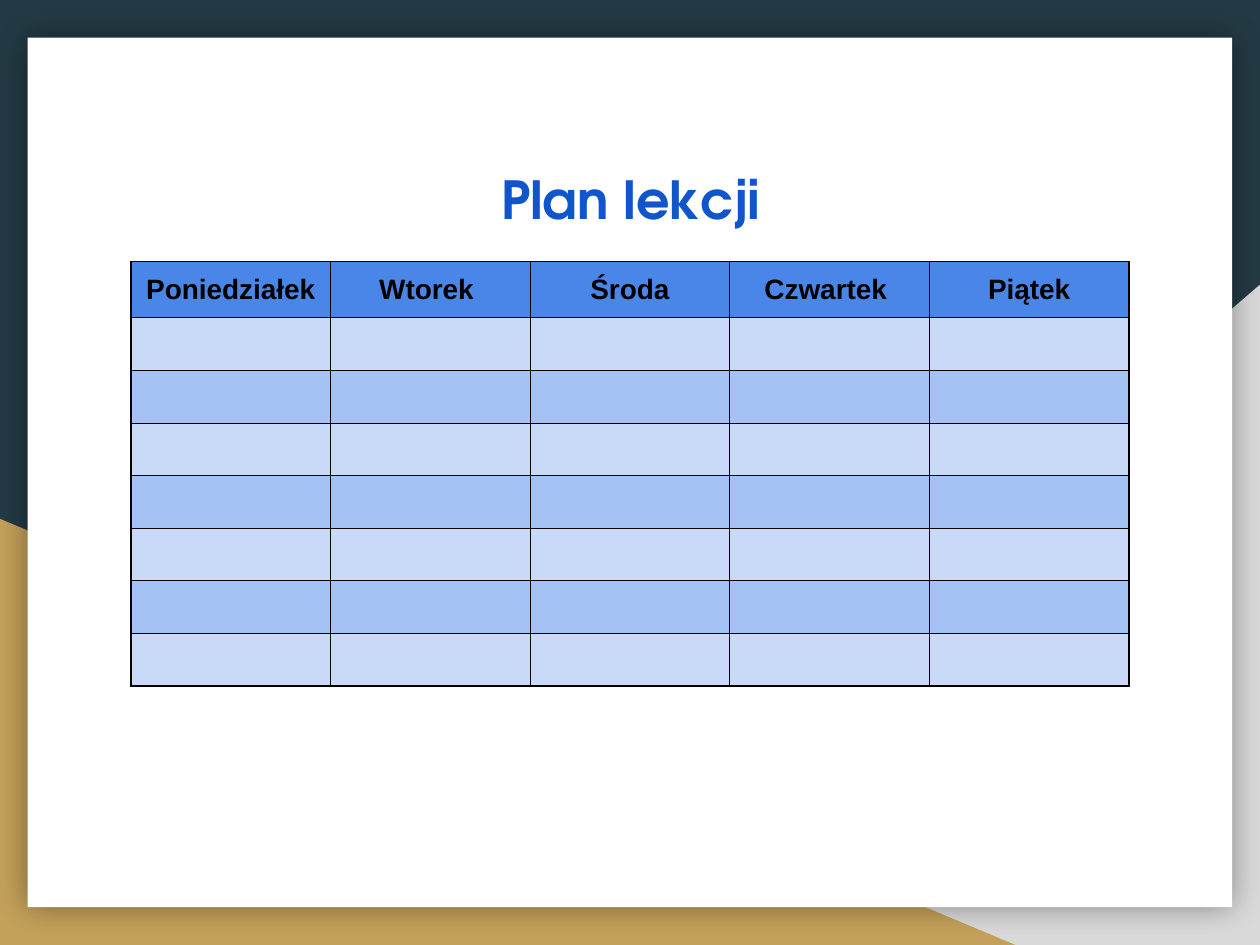
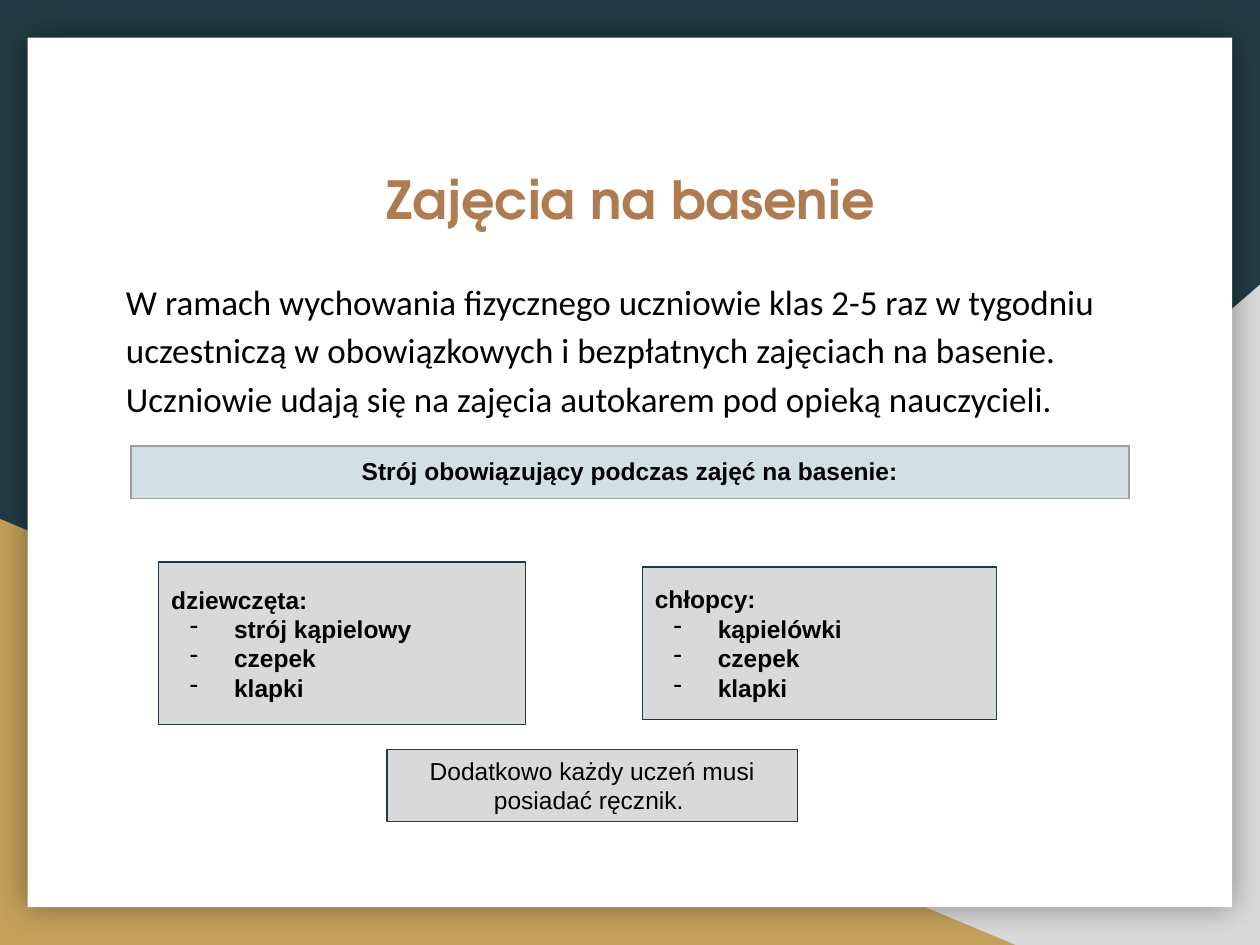
from lxml.etree import SubElement
from pptx import Presentation
from pptx.dml.color import RGBColor
from pptx.enum.shapes import MSO_SHAPE
from pptx.enum.text import MSO_ANCHOR, PP_ALIGN
from pptx.oxml.ns import qn
from pptx.util import Cm, Pt

# Shared colours and text formats
NAVY, GOLD, GREY, WHITE, BLACK = "233A44", "C4A15A", "D9D9D9", "FFFFFF", "000000"
TITLE = {"name": "TeX Gyre Adventor", "size": Pt(30), "bold": True}
BODY = {"name": "Calibri", "size": Pt(20), "bold": False}
HEADER = {"name": "Arial", "size": Pt(16), "bold": True}
STRONG = {"name": "Arial", "size": Pt(14), "bold": True}
PLAIN = {"name": "Arial", "size": Pt(14), "bold": False}

INSET = Cm(0.25)
TABLE_LEFT, TABLE_WIDTH, ROW_HEIGHT = 2.64, 20.12, 1.06


def color(value):
    return RGBColor.from_string(value)


def set_values(target, values):
    for name, value in values.items():
        setattr(target, name, value)


def add_xml(parent, tag, **attributes):
    return SubElement(parent, qn(tag), attributes)


def add_xml_color(parent, value):
    return add_xml(parent, "a:srgbClr", val=value)


class SlideBuilder:
    def __init__(self):
        self.presentation = Presentation()
        self.presentation.slide_width = Cm(25.4)
        self.presentation.slide_height = Cm(19.05)
        background = self.presentation.slide_master.background.fill
        background.solid()
        background.fore_color.rgb = color(NAVY)
        self.slide = None

    def new_slide(self, title, title_color):
        """Add a slide with the corner triangles, white card and title."""
        layout = self.presentation.slide_layouts[6]
        self.slide = self.presentation.slides.add_slide(layout)
        triangle = self.shape(MSO_SHAPE.RIGHT_TRIANGLE, (9.96, 5.74, 15.44, 13.31), GREY)
        triangle.element.spPr.find(qn("a:xfrm")).set("flipH", "1")
        self.shape(MSO_SHAPE.RIGHT_TRIANGLE, (0, 10.46, 20.47, 8.59), GOLD)
        card = self.shape(MSO_SHAPE.RECTANGLE, (0.56, 0.76, 24.28, 17.53), WHITE)
        self.soft_shadow(card)
        self.text_box((2.29, 3.12, 20.85, 3.53), title, TITLE, title_color,
                      alignment=PP_ALIGN.CENTER)

    def shape(self, kind, box, fill, line=None):
        shape = self.slide.shapes.add_shape(kind, *map(Cm, box))
        shape.shadow.inherit = False
        shape.fill.solid()
        shape.fill.fore_color.rgb = color(fill)
        if line:
            shape.line.color.rgb = color(line)
            shape.line.width = Pt(0.75)
        else:
            shape.line.fill.background()
        return shape

    def soft_shadow(self, shape):
        effects = shape.element.spPr.find(qn("a:effectLst"))
        shadow = add_xml(effects, "a:outerShdw", blurRad=str(Pt(18)), dist="0",
                         algn="ctr", rotWithShape="0")
        add_xml(add_xml_color(shadow, BLACK), "a:alpha", val="40000")

    def frame(self, frame, anchor):
        set_values(frame, {"word_wrap": True, "vertical_anchor": anchor,
                           "margin_left": INSET, "margin_right": INSET,
                           "margin_top": INSET, "margin_bottom": INSET})

    def fill_text(self, paragraph, text, font, text_color=BLACK, **paragraph_format):
        set_values(paragraph, paragraph_format)
        run = paragraph.add_run()
        run.text = text
        set_values(run.font, font)
        run.font.color.rgb = color(text_color)

    def text_box(self, box, text, font, text_color=BLACK, **paragraph_format):
        frame = self.slide.shapes.add_textbox(*map(Cm, box)).text_frame
        self.frame(frame, MSO_ANCHOR.TOP)
        self.fill_text(frame.paragraphs[0], text, font, text_color, **paragraph_format)

    def note(self, box, text, font, alignment, items=()):
        """Add a grey box with a line of text and an optional dashed list."""
        frame = self.shape(MSO_SHAPE.RECTANGLE, box, GREY, NAVY).text_frame
        self.frame(frame, MSO_ANCHOR.MIDDLE)
        self.fill_text(frame.paragraphs[0], text, font, alignment=alignment)
        for item in items:
            paragraph = frame.add_paragraph()
            self.fill_text(paragraph, item, font, alignment=alignment)
            self.dash(paragraph)

    def dash(self, paragraph):
        properties = paragraph._p.get_or_add_pPr()
        properties.set("marL", str(Cm(1.27)))
        properties.set("indent", str(-Cm(0.89)))
        add_xml_color(add_xml(properties, "a:buClr"), BLACK)
        add_xml(properties, "a:buChar", char="-")

    def table(self, top, headings, font, row_heights, row_fills, border):
        """Add a table whose first row holds the headings."""
        table = self.slide.shapes.add_table(
            len(row_heights), len(headings), Cm(TABLE_LEFT), Cm(top),
            Cm(TABLE_WIDTH), Cm(sum(row_heights))).table
        set_values(table, {"first_row": False, "horz_banding": False})
        for row, height, fill in zip(table.rows, row_heights, row_fills):
            row.height = Cm(height)
            for cell in row.cells:
                self.cell(cell, fill, border)
        for column, heading in enumerate(headings):
            paragraph = table.cell(0, column).text_frame.paragraphs[0]
            self.fill_text(paragraph, heading, font, alignment=PP_ALIGN.CENTER)

    def cell(self, cell, fill, border):
        set_values(cell, {"vertical_anchor": MSO_ANCHOR.MIDDLE,
                          "margin_left": INSET, "margin_right": INSET,
                          "margin_top": Cm(0.1), "margin_bottom": Cm(0.1)})
        properties = cell._tc.get_or_add_tcPr()
        for side in ("a:lnL", "a:lnR", "a:lnT", "a:lnB"):
            line = add_xml(properties, side, w=str(Pt(0.75)))
            add_xml_color(add_xml(line, "a:solidFill"), border)
        cell.fill.solid()
        cell.fill.fore_color.rgb = color(fill)


def timetable_slide(builder):
    builder.new_slide("Plan lekcji", "1155CC")
    lessons = 7
    bands = [("C9DAF8", "A4C2F4")[lesson % 2] for lesson in range(lessons)]
    days = ["Poniedziałek", "Wtorek ", "Środa", "Czwartek ", "Piątek"]
    builder.table(5.28, days, HEADER, [1.13] + [ROW_HEIGHT] * lessons,
                  ["4A86E8"] + bands, BLACK)


def swimming_slide(builder):
    builder.new_slide("Zajęcia na basenie", "AF7B51")
    builder.text_box(
        (2.29, 5.28, 20.85, 11.18),
        "W ramach wychowania fizycznego uczniowie klas 2-5 raz w tygodniu "
        "uczestniczą w obowiązkowych i bezpłatnych zajęciach na basenie. "
        "Uczniowie udają się na zajęcia autokarem pod opieką nauczycieli.",
        BODY, line_spacing=1.15)
    builder.table(8.99, ["Strój obowiązujący podczas zajęć na basenie:"], STRONG,
                  [ROW_HEIGHT], ["D0E0E3"], "9E9E9E")

    # Swimwear lists and the towel reminder
    outfits = [
        ((3.2, 11.33, 7.39, 3.28), "dziewczęta:", "strój kąpielowy"),
        ((12.95, 11.43, 7.14, 3.07), "chłopcy:", "kąpielówki"),
    ]
    for box, group, swimwear in outfits:
        builder.note(box, group, STRONG, PP_ALIGN.LEFT, [swimwear, "czepek", "klapki"])
    builder.note((7.8, 15.11, 8.28, 1.45),
                 "Dodatkowo każdy uczeń musi posiadać ręcznik. ", PLAIN, PP_ALIGN.CENTER)


def main():
    builder = SlideBuilder()
    timetable_slide(builder)
    swimming_slide(builder)
    builder.presentation.save("out.pptx")


if __name__ == "__main__":
    main()
